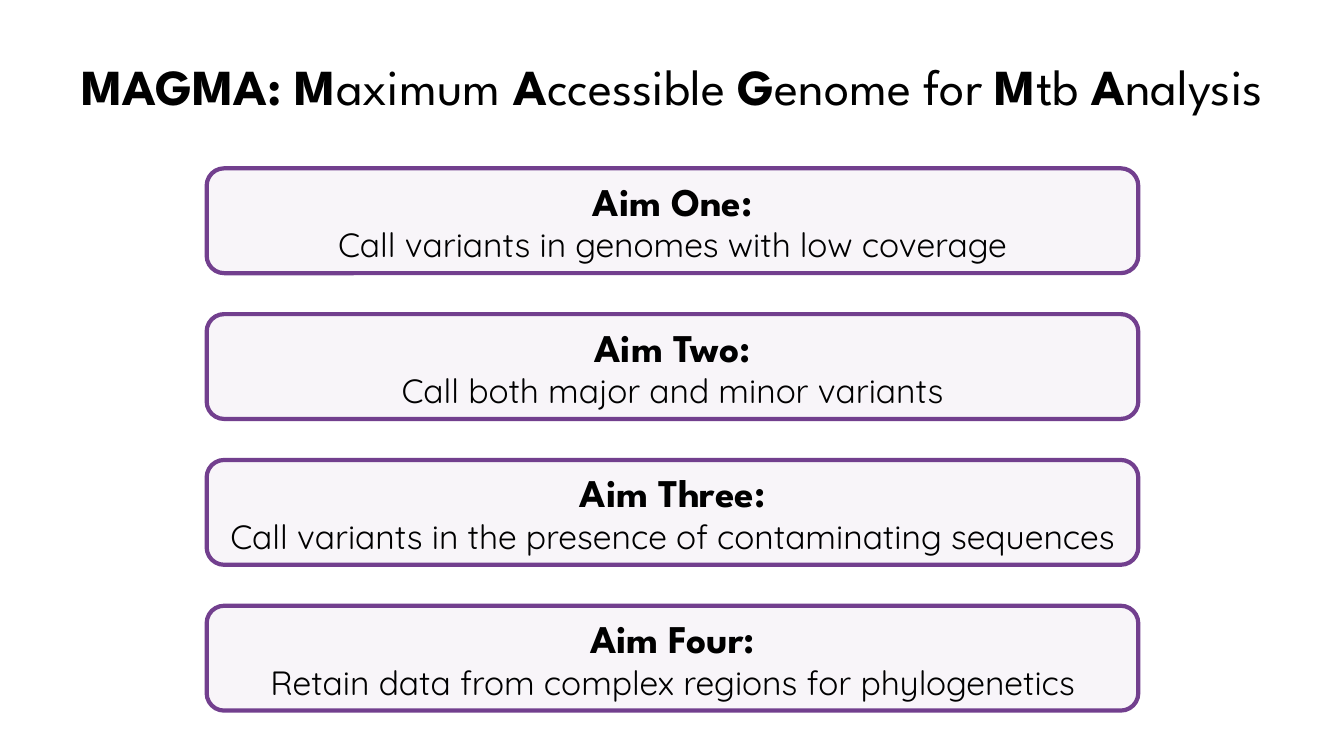
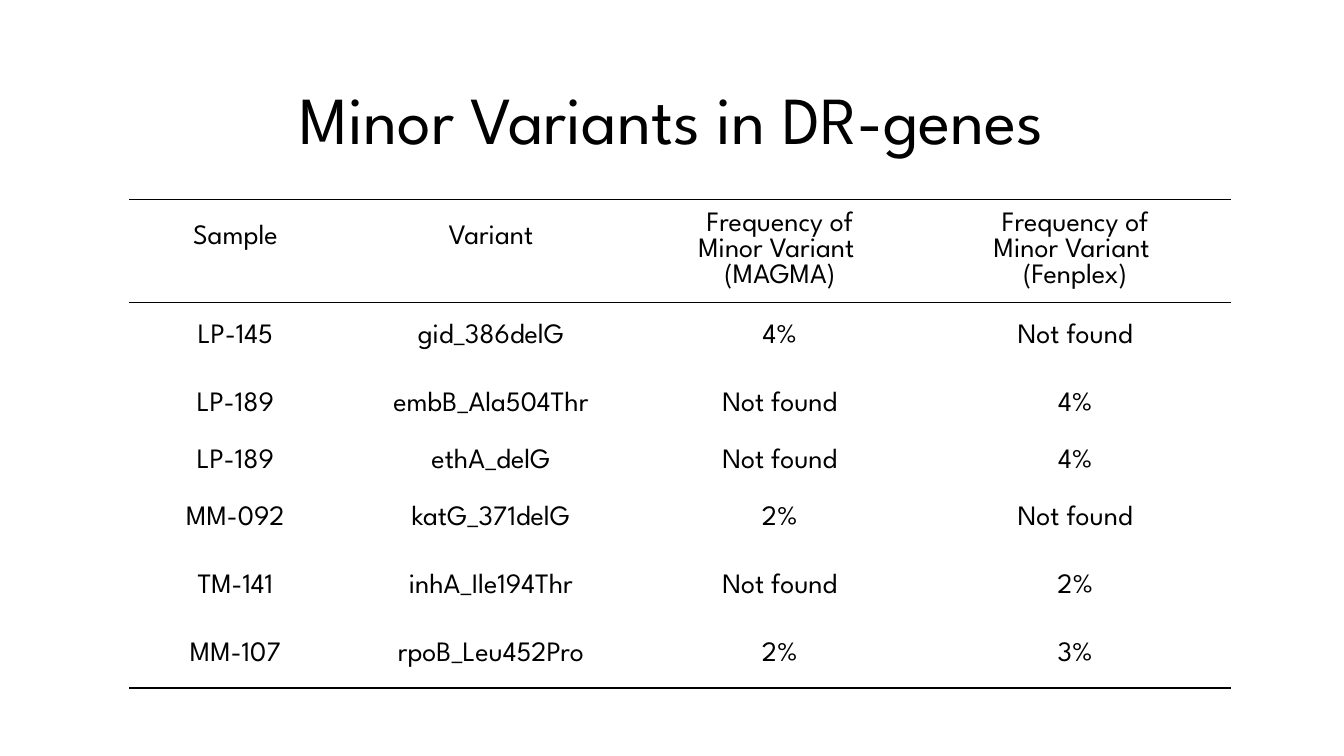
from dataclasses import dataclass

from lxml.etree import SubElement
from pptx import Presentation
from pptx.dml.color import RGBColor
from pptx.enum.shapes import MSO_SHAPE as Preset
from pptx.enum.text import MSO_ANCHOR as Anchor, MSO_AUTO_SIZE as AutoSize, PP_ALIGN as Align
from pptx.oxml.ns import qn
from pptx.slide import Slide
from pptx.table import _Cell as Cell
from pptx.util import Inches, Pt

COLORS = {"text": "000000", "box_fill": "7B3C94", "box_line": "723F8E", "rule": "000000"}
HEADING_FONT = "League Spartan"
BODY_FONT = "Quicksand"
PLAIN_TABLE_STYLE = "{2D5ABB26-0587-4C30-8999-92F81FD0307C}"


@dataclass(frozen=True)
class Aim:
    heading: str
    goal: str


@dataclass(frozen=True)
class VariantRow:
    sample: str
    variant: str
    magma: str
    fenplex: str
    height: float = 0


AIMS = [
    Aim("Aim One:", "Call variants in genomes with low coverage"),
    Aim("Aim Two:", "Call both major and minor variants"),
    Aim("Aim Three:", "Call variants in the presence of contaminating sequences"),
    Aim("Aim Four:", "Retain data from complex regions for phylogenetics"),
]

HEADER = VariantRow(
    "Sample",
    "Variant",
    "Frequency of\nMinor Variant \n(MAGMA)",
    "Frequency of\nMinor Variant \n(Fenplex)",
    height=1.02,
)
VARIANTS = [
    VariantRow("LP-145", "gid_386delG", "4%", "Not found"),
    VariantRow("LP-189", "embB_Ala504Thr", "Not found", "4%"),
    VariantRow("LP-189", "ethA_delG", "Not found", "4%", height=0.46),
    VariantRow("MM-092", "katG_371delG", "2%", "Not found"),
    VariantRow("TM-141", "inhA_Ile194Thr", "Not found", "2%"),
    VariantRow("MM-107", "rpoB_Leu452Pro", "2%", "3%"),
]


def rgb(name: str) -> RGBColor:
    return RGBColor.from_string(COLORS[name])


def write(text_frame, text: str, *, size: float, font: str = HEADING_FONT,
          append: bool = False) -> None:
    """Write centred paragraphs, one per line; text between asterisks is bold."""
    for index, line in enumerate(text.split("\n")):
        new = append or index > 0
        paragraph = text_frame.add_paragraph() if new else text_frame.paragraphs[0]
        paragraph.alignment = Align.CENTER
        for position, part in enumerate(line.split("*")):
            if part:
                run = paragraph.add_run()
                run.text = part
                run.font.name = font
                run.font.size = Pt(size)
                run.font.bold = position % 2 == 1
                run.font.color.rgb = rgb("text")


def add_title(slide: Slide, text: str, left: float, top: float,
              width: float, height: float, size: float) -> None:
    box = slide.shapes.add_textbox(Inches(left), Inches(top), Inches(width), Inches(height))
    box.text_frame.word_wrap = True
    box.text_frame.auto_size = AutoSize.SHAPE_TO_FIT_TEXT
    write(box.text_frame, text, size=size)


def add_aim_box(slide: Slide, aim: Aim, top: float) -> None:
    box = slide.shapes.add_shape(
        Preset.ROUNDED_RECTANGLE, Inches(2.05), Inches(top), Inches(9.24), Inches(1.04))
    box.shadow.inherit = False
    box.fill.solid()
    box.fill.fore_color.rgb = rgb("box_fill")
    fill_color = box.element.spPr.find(qn("a:solidFill")).find(qn("a:srgbClr"))
    SubElement(fill_color, qn("a:alpha"), val="5000")
    box.line.color.rgb = rgb("box_line")
    box.line.width = Pt(3)
    box.text_frame.vertical_anchor = Anchor.MIDDLE
    write(box.text_frame, f"*{aim.heading}*", size=28)
    write(box.text_frame, aim.goal, size=24, font=BODY_FONT, append=True)


def add_border(cell: Cell, side: str, width: float) -> None:
    line = SubElement(cell._tc.get_or_add_tcPr(), qn(f"a:ln{side}"), w=str(Pt(width)))
    fill = SubElement(line, qn("a:solidFill"))
    SubElement(fill, qn("a:srgbClr"), val=COLORS["rule"])


def fill_cell(cell: Cell, text: str, borders: dict[str, float]) -> None:
    cell.vertical_anchor = Anchor.MIDDLE
    cell.margin_left = cell.margin_right = Inches(0.01)
    cell.margin_top = cell.margin_bottom = Inches(0.01)
    for side, width in borders.items():
        add_border(cell, side, width)
    cell.fill.background()
    write(cell.text_frame, text, size=20)


def add_variant_table(slide: Slide) -> None:
    rows = [HEADER, *VARIANTS]
    column_widths = [2.11, 2.96, 2.77, 3.09]
    table_height = 4.85
    fixed = [row.height for row in rows if row.height]
    shared_height = (table_height - sum(fixed)) / (len(rows) - len(fixed))

    frame = slide.shapes.add_table(
        len(rows), len(column_widths), Inches(1.28), Inches(1.98),
        Inches(sum(column_widths)), Inches(table_height))
    table = frame.table
    table.first_row = table.horz_banding = False
    for style in frame.element.iter(qn("a:tableStyleId")):
        style.text = PLAIN_TABLE_STYLE
    for column, width in zip(table.columns, column_widths):
        column.width = Inches(width)

    # Heavier rules outside, a thin one below the header
    borders = {0: {"T": 1.5, "B": 1}, len(rows) - 1: {"B": 1.5}}
    for index, row in enumerate(rows):
        table.rows[index].height = Inches(row.height or shared_height)
        texts = (row.sample, row.variant, row.magma, row.fenplex)
        for column, text in enumerate(texts):
            fill_cell(table.cell(index, column), text, borders.get(index, {}))

    # The one-line headings sit half a line above the middle
    for column in (0, 1):
        table.cell(0, column).margin_bottom = Inches(0.28)


def build_aims_slide(slide: Slide) -> None:
    add_title(slide, "*MAGMA: M*aximum *A*ccessible *G*enome for *M*tb *A*nalysis",
              0.06, 0.5, 13.21, 0.71, 36)
    first_top, last_top = 1.67, 6.01
    pitch = (last_top - first_top) / (len(AIMS) - 1)
    for index, aim in enumerate(AIMS):
        add_aim_box(slide, aim, first_top + index * pitch)


def build_variants_slide(slide: Slide) -> None:
    add_title(slide, "Minor Variants in DR-genes", 0, 0.72, 13.33, 0.91, 48)
    add_variant_table(slide)


def main() -> None:
    presentation = Presentation()
    presentation.slide_width = Inches(13.33)
    presentation.slide_height = Inches(7.5)
    blank_layout = presentation.slide_layouts[6]
    for build in (build_aims_slide, build_variants_slide):
        build(presentation.slides.add_slide(blank_layout))
    presentation.save("out.pptx")


if __name__ == "__main__":
    main()
